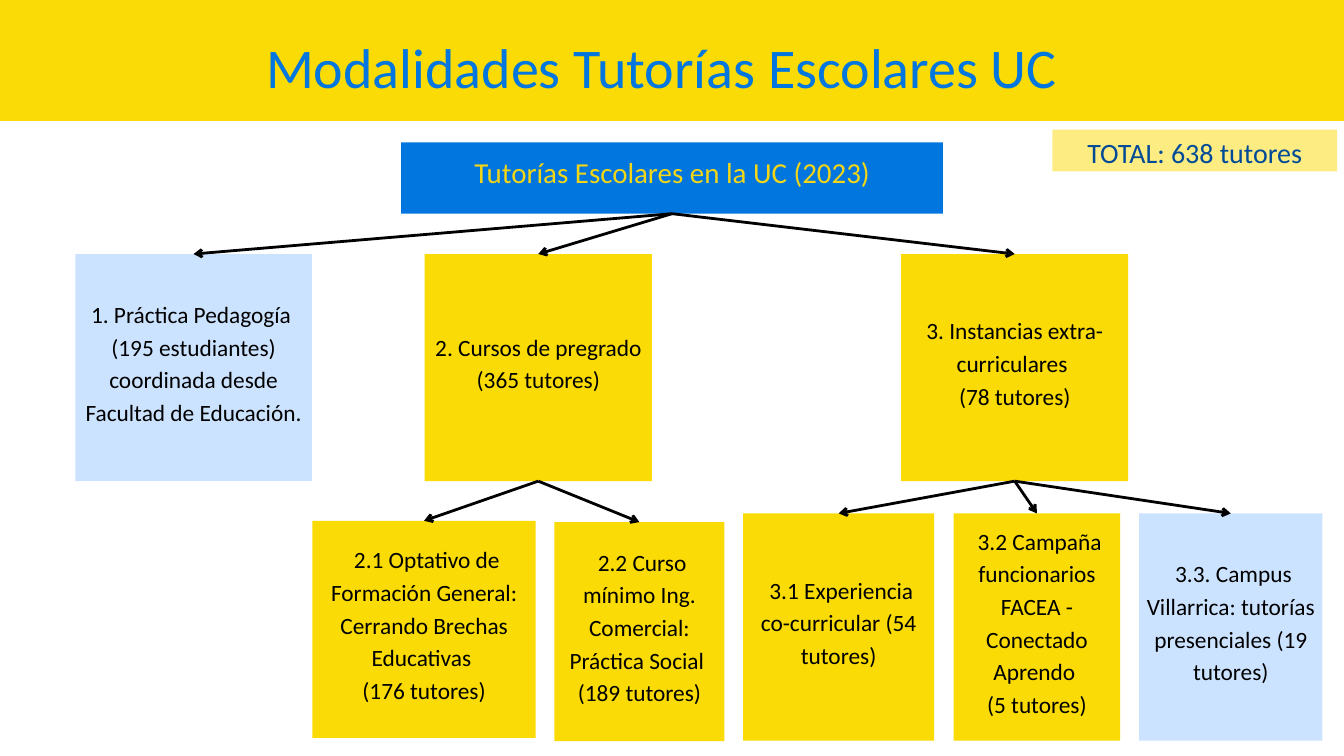
from lxml import etree
from pptx import Presentation
from pptx.dml.color import RGBColor
from pptx.enum.shapes import MSO_CONNECTOR, MSO_SHAPE
from pptx.enum.text import MSO_ANCHOR, PP_ALIGN
from pptx.oxml.ns import qn
from pptx.util import Inches, Pt

RECTANGLE = MSO_SHAPE.RECTANGLE
STRAIGHT = MSO_CONNECTOR.STRAIGHT
MIDDLE, TOP = MSO_ANCHOR.MIDDLE, MSO_ANCHOR.TOP
CENTER = PP_ALIGN.CENTER
TOP_SITE, BOTTOM_SITE = 0, 2

FONT = "Calibri"
PADDING = 0.06
COLORS = {
    "yellow": "FADB05",
    "pale_blue": "CCE3FF",
    "blue": "0176DE",
    "navy": "004A98",
    "gold": "F2D617",
    "black": "000000",
}

MODALITIES = [
    ((1.12, 3.78, 3.52, 3.38), "pale_blue",
     ["1. Práctica Pedagogía ",
      "(195 estudiantes) coordinada desde Facultad de Educación."], []),
    ((6.32, 3.78, 3.38, 3.38), "yellow",
     ["2. Cursos de pregrado", "(365 tutores)"], [
         ((4.65, 7.75, 3.32, 3.23), "yellow",
          [" 2.1 Optativo de Formación General: Cerrando Brechas Educativas ",
           "(176 tutores)"], []),
         ((8.25, 7.77, 2.53, 3.26), "yellow",
          [" 2.2 Curso mínimo Ing. Comercial: Práctica Social ",
           "(189 tutores)"], []),
     ]),
    ((13.41, 3.78, 3.38, 3.38), "yellow",
     ["3. Instancias extra-curriculares ", "(78 tutores)"], [
         ((11.06, 7.64, 2.84, 3.38), "yellow",
          [" 3.1 Experiencia co-curricular (54 tutores)"], []),
         ((14.19, 7.64, 2.48, 3.38), "yellow",
          [" 3.2 Campaña funcionarios FACEA - Conectado Aprendo ",
           "(5 tutores)"], []),
         ((16.95, 7.64, 2.73, 3.38), "pale_blue",
          [" 3.3. Campus Villarrica: tutorías presenciales (19 tutores)"], []),
     ]),
]


def rgb(name):
    return RGBColor.from_string(COLORS[name])


def write(shape, lines, size, color, spacing, insets=(0, 0, 0, 0), anchor=TOP):
    frame = shape.text_frame
    frame.word_wrap = True
    frame.vertical_anchor = anchor
    (frame.margin_left, frame.margin_top,
     frame.margin_right, frame.margin_bottom) = map(Inches, insets)
    for index, line in enumerate(lines):
        paragraph = frame.paragraphs[0] if index == 0 else frame.add_paragraph()
        paragraph.text = line
        paragraph.alignment = CENTER
        paragraph.line_spacing = Pt(spacing)
        paragraph.font.name = FONT
        paragraph.font.size = Pt(size)
        paragraph.font.color.rgb = rgb(color)


def add_panel(slide, bounds, fill, opacity=None):
    panel = slide.shapes.add_shape(RECTANGLE, *map(Inches, bounds))
    panel.shadow.inherit = False
    panel.fill.solid()
    panel.fill.fore_color.rgb = rgb(fill)
    panel.line.fill.background()
    if opacity is not None:
        color = panel.fill._xPr.find(qn("a:solidFill"))[0]
        etree.SubElement(color, qn("a:alpha"), val=str(opacity * 1000))
    return panel


def add_node(slide, bounds, fill, lines, size=25, color="black", spacing=35, lift=0.2):
    node = add_panel(slide, bounds, fill)
    insets = (PADDING, PADDING, PADDING, PADDING + lift)
    write(node, lines, size, color, spacing, insets, MIDDLE)
    return node


def add_label(slide, bounds, text, size, color, spacing):
    label = slide.shapes.add_textbox(*map(Inches, bounds))
    write(label, [text], size, color, spacing)


def add_arrow(slide, parent, child):
    arrow = slide.shapes.add_connector(STRAIGHT, 0, 0, 0, 0)
    arrow.begin_connect(parent, BOTTOM_SITE)
    arrow.end_connect(child, TOP_SITE)
    arrow.line.color.rgb = rgb("black")
    arrow.line.width = Pt(3)
    etree.SubElement(arrow.line._get_or_add_ln(), qn("a:tailEnd"), type="arrow")
    etree.SubElement(arrow._element.spPr, qn("a:effectLst"))


def add_branches(slide, parent, branches):
    for bounds, fill, lines, children in branches:
        node = add_node(slide, bounds, fill, lines)
        add_arrow(slide, parent, node)
        add_branches(slide, node, children)


def main():
    presentation = Presentation()
    presentation.slide_width = Inches(20)
    presentation.slide_height = Inches(11.25)
    slide = presentation.slides.add_slide(presentation.slide_layouts[6])

    add_panel(slide, (0, 0, 20, 1.8), "yellow")
    add_label(slide, (0, 0.49, 19.69, 1.01),
              "Modalidades Tutorías Escolares UC", 60, "blue", 72)

    root = add_node(slide, (5.97, 2.12, 8.06, 1.06), "blue",
                    ["Tutorías Escolares en la UC (2023)"],
                    size=31, color="gold", spacing=43.4, lift=0.28)
    add_branches(slide, root, MODALITIES)

    add_panel(slide, (15.66, 1.93, 4.24, 0.62), "yellow", opacity=50)
    add_label(slide, (15.75, 1.94, 4.06, 0.55), "TOTAL: 638 tutores", 30, "navy", 42)

    presentation.save("out.pptx")


if __name__ == "__main__":
    main()
